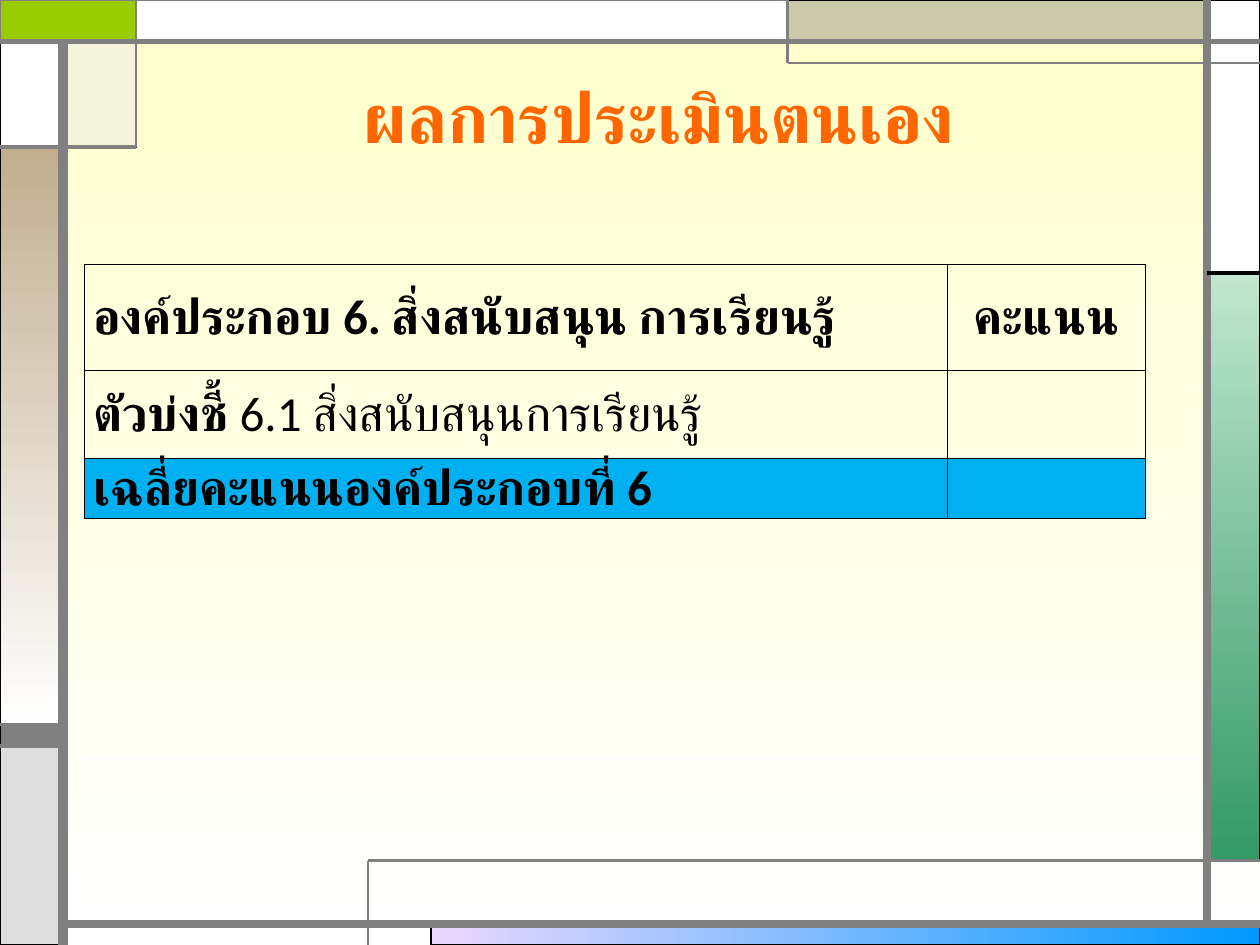
from dataclasses import dataclass

from pptx import Presentation
from pptx.dml.color import RGBColor
from pptx.enum import shapes, text
from pptx.oxml.ns import qn
from pptx.util import Inches, Pt
from lxml import etree


@dataclass(frozen=True)
class Theme:
    font: str = "Calibri"
    title_size: int = 40
    body_size: int = 28
    title: str = "FF6600"
    ink: str = "000000"
    rule: str = "808080"
    white: str = "FFFFFF"
    cream: str = "FFFFCC"
    total: str = "00B0F0"
    silver: str = "DDDDDD"
    mist: str = "EAEAEA"
    khaki: str = "CAC9AA"
    lime: str = "99CC00"
    tan: str = "C1AE8F"
    mint: str = "C1E7CE"
    green: str = "339966"
    lilac: str = "EBD7FF"
    blue: str = "0099FF"


T = Theme()
NO_FILL = None
ROWS = [
    ([("องค์ประกอบ 6. สิ่งสนับสนุน การเรียนรู้", True)], [("คะแนน", True)]),
    ([("ตัวบ่งชี้ ", True), ("6.1 สิ่งสนับสนุนการเรียนรู้", False)], []),
    ([("เฉลี่ยคะแนนองค์ประกอบที่ 6", True)], []),
]


def rgb(value):
    return RGBColor.from_string(value)


def paint(fill, color, angle=0):
    if isinstance(color, tuple):
        fill.gradient()
        fill.gradient_angle = (360 - angle) % 360
        for stop, value in zip(fill.gradient_stops, color):
            stop.color.rgb = rgb(value)
    else:
        fill.solid()
        fill.fore_color.rgb = rgb(color)


def set_alpha(shape, percent):
    color = shape.fill._xPr.find(qn("a:solidFill"))[0]
    etree.SubElement(color, qn("a:alpha"), val=str(percent * 1000))


def add_run(p, words, size, color, bold):
    r = p.add_run()
    r.text = words
    for key, value in {"name": T.font, "size": Pt(size), "bold": bold}.items():
        setattr(r.font, key, value)
    r.font.color.rgb = rgb(color)
    etree.SubElement(r.font._element, qn("a:cs"), typeface=T.font)


def add_panel(group, box, color, angle=0, line=T.ink, width=0.75):
    sp = group.shapes.add_shape(
        shapes.MSO_SHAPE.RECTANGLE, *(Inches(v) for v in box))
    sp.shadow.inherit = False
    paint(sp.fill, color, angle)
    sp.line.color.rgb = rgb(line)
    sp.line.width = Pt(width)
    return sp


def add_rule(group, x1, y1, x2, y2, width, color=T.rule):
    ln = group.shapes.add_connector(
        shapes.MSO_CONNECTOR.STRAIGHT, *(Inches(v) for v in (x1, y1, x2, y2)))
    ln.line.color.rgb = rgb(color)
    ln.line.width = Pt(width)
    etree.SubElement(ln._element.spPr, qn("a:effectLst"))


def add_frame(s, left, top, width, height):
    right, bottom = left + width, top + height
    rail_l, rail_r = left + 0.5, right - 0.42
    rail_t, rail_b = top + 0.33, bottom - 0.17
    tab_x, tab_y = left + 1.08, top + 1.17
    crown_x, crown_y = left + 6.25, top + 0.5
    foot_x, foot_y = left + 2.92, bottom - 0.67
    side_y = top + 2.17
    band_t, band_b = bottom - 1.75, bottom - 1.58
    group = s.shapes.add_group_shape()

    panels = [
        (left + 3.42, rail_b, right, bottom, (T.lilac, T.blue), 0),
        (rail_r, side_y, right, foot_y, (T.mint, T.green), 90),
        (left, band_t, rail_l, band_b, T.rule, 0),
        (left, band_b, rail_l, bottom, T.silver, 0),
        (rail_r, top, right, side_y, T.white, 0),
        (crown_x, top, rail_r, rail_t, T.khaki, 0),
        (left, tab_y, rail_l, band_t, (T.tan, T.white), 90),
        (left, rail_t, rail_l, tab_y, T.white, 0),
    ]
    for x1, y1, x2, y2, color, angle in panels:
        add_panel(group, (x1, y1, x2 - x1, y2 - y1), color, angle)
    tab = add_panel(
        group, (rail_l, rail_t, tab_x - rail_l, tab_y - rail_t), T.mist)
    set_alpha(tab, 50)
    for x1, x2, color, line in [(left, tab_x, T.lime, 1.5),
                                (tab_x, crown_x, T.white, 0.75)]:
        add_panel(group, (x1, top, x2 - x1, rail_t - top), color,
                  line=T.rule, width=line)

    rules = [
        (rail_l, bottom, rail_l, rail_t, 6),
        (rail_l, rail_b, right, rail_b, 4.5),
        (rail_r, rail_b, rail_r, top, 4.5),
        (left, rail_t, right, rail_t, 3),
        (right, crown_y, crown_x, crown_y, 1.5),
        (crown_x, crown_y, crown_x, top, 1.5),
        (rail_r, side_y, right, side_y, 2.25, T.ink),
        (tab_x, top, tab_x, tab_y, 1.5),
        (tab_x, tab_y, left, tab_y, 2.25),
        (foot_x, bottom, foot_x, foot_y, 1.5),
        (foot_x, foot_y, right, foot_y, 1.5),
        (rail_l, band_t, left, band_t, 2.25),
        (rail_l, band_b, left, band_b, 2.25),
    ]
    for rule in rules:
        add_rule(group, *rule)


def add_title(s, left, top, width, height):
    sp = s.shapes.title
    box = {"left": left, "top": top, "width": width, "height": height}
    for key, value in box.items():
        setattr(sp, key, Inches(value))
    tf = sp.text_frame
    tf.vertical_anchor = text.MSO_ANCHOR.MIDDLE
    p = tf.paragraphs[0]
    p.alignment = text.PP_ALIGN.CENTER
    add_run(p, "ผลการประเมินตนเอง", T.title_size, T.title, True)
    sp.element.getparent().append(sp.element)


def add_borders(cell):
    props = cell._tc.get_or_add_tcPr()
    for i, side in enumerate(("lnL", "lnR", "lnT", "lnB")):
        ln = etree.Element(qn(f"a:{side}"), w=str(Pt(1)))
        fill = etree.SubElement(ln, qn("a:solidFill"))
        etree.SubElement(fill, qn("a:srgbClr"), val=T.ink)
        props.insert(i, ln)


def format_cell(cell, runs, color, anchor, align):
    margins = {"margin_left": 0.07, "margin_right": 0.07,
               "margin_top": 0, "margin_bottom": 0}
    for key, value in margins.items():
        setattr(cell, key, Inches(value))
    cell.vertical_anchor = anchor
    if color is NO_FILL:
        cell.fill.background()
    else:
        paint(cell.fill, color)
    add_borders(cell)
    p = cell.text_frame.paragraphs[0]
    p.alignment = align
    for words, bold in runs:
        add_run(p, words, T.body_size, T.ink, bold)


def add_scores(s, left, top, width, height):
    box = (Inches(v) for v in (left, top, width, height))
    table = s.shapes.add_table(len(ROWS), 2, *box).table
    table.first_row = table.horz_banding = False
    score_w, head_h, item_h = 1.57, 0.84, 0.7
    for col, w in zip(table.columns, (width - score_w, score_w)):
        col.width = Inches(w)
    for row, h in zip(table.rows, (head_h, item_h, height - head_h - item_h)):
        row.height = Inches(h)
    aligns = (text.PP_ALIGN.LEFT, text.PP_ALIGN.CENTER)
    for i, row in enumerate(ROWS):
        last = i == len(ROWS) - 1
        color = T.total if last else NO_FILL
        anchor = text.MSO_ANCHOR.TOP if last else text.MSO_ANCHOR.MIDDLE
        for j, (runs, align) in enumerate(zip(row, aligns)):
            format_cell(table.cell(i, j), runs, color, anchor, align)


def main():
    prs = Presentation()
    prs.slide_width, prs.slide_height = Inches(10), Inches(7.5)
    s = prs.slides.add_slide(prs.slide_layouts[5])
    paint(s.background.fill, (T.cream, T.white), 90)
    add_frame(s, 0, 0, 10, 7.5)
    add_title(s, 0.98, 0.29, 8.5, 1.25)
    add_scores(s, 0.67, 2.1, 8.42, 2.01)
    prs.save("out.pptx")


if __name__ == "__main__":
    main()
